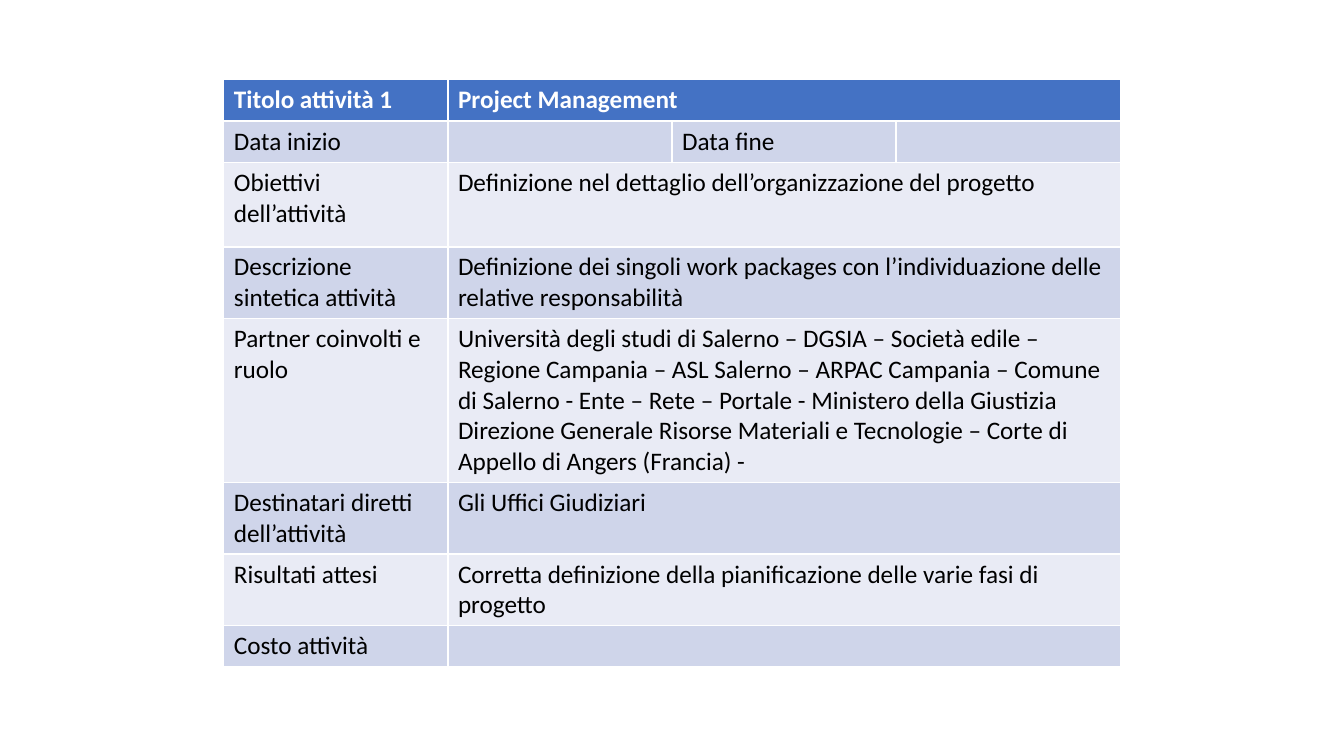
from pptx import Presentation
from pptx.dml.color import RGBColor
from pptx.util import Inches, Pt

HUES = {"head": "4472C4", "dark": "CFD5EA", "light": "E9EBF5",
        "white": "FFFFFF", "black": "000000"}
COLS = 4
LINE, TALL = 0.41, 0.84
ROWS = [
    ("Titolo attività 1", "Project Management"),
    ("Data inizio", "", "Data fine", ""),
    ("Obiettivi dell’attività",
     "Definizione nel dettaglio dell’organizzazione del progetto"),
    ("Descrizione sintetica attività",
     "Definizione dei singoli work packages con l’individuazione delle "
     "relative responsabilità"),
    ("Partner coinvolti e ruolo",
     "Università degli studi di Salerno – DGSIA – Società edile – Regione "
     "Campania – ASL Salerno – ARPAC Campania – Comune di Salerno - Ente – "
     "Rete – Portale - Ministero della Giustizia Direzione Generale Risorse "
     "Materiali e Tecnologie – Corte di Appello di Angers (Francia) -"),
    ("Destinatari diretti dell’attività", "Gli Uffici Giudiziari"),
    ("Risultati attesi",
     "Corretta definizione della pianificazione delle varie fasi di progetto"),
    ("Costo attività", ""),
]


def hue(name):
    """Return the named colour."""
    return RGBColor.from_string(HUES[name])


def fill_cell(cell, text, back, head):
    """Write and colour one cell."""
    cell.fill.solid()
    cell.fill.fore_color.rgb = hue(back)
    cell.text = text
    font = cell.text_frame.paragraphs[0].font
    font.name, font.size, font.bold = "Calibri", Pt(18), head
    font.color.rgb = hue("white" if head else "black")


def add_plan(slide, left, top, width, height):
    """Place the activity table in the given box."""
    frame = slide.shapes.add_table(len(ROWS), COLS, left, top, width, height)
    table = frame.table
    for i, texts in enumerate(ROWS):
        table.rows[i].height = Inches(TALL if i == 2 else LINE)
        back = "head" if i == 0 else "dark" if i % 2 else "light"
        if len(texts) < COLS:
            table.cell(i, 1).merge(table.cell(i, COLS - 1))
        for j, text in enumerate(texts):
            fill_cell(table.cell(i, j), text, back, i == 0)
    frame.height = height


def main():
    """Build and save the slide."""
    deck = Presentation()
    deck.slide_width, deck.slide_height = Inches(13.33), Inches(7.5)
    slide = deck.slides.add_slide(deck.slide_layouts[6])
    add_plan(slide, Inches(2.22), Inches(0.79), Inches(8.89), Inches(5.75))
    deck.save("out.pptx")


if __name__ == "__main__":
    main()
